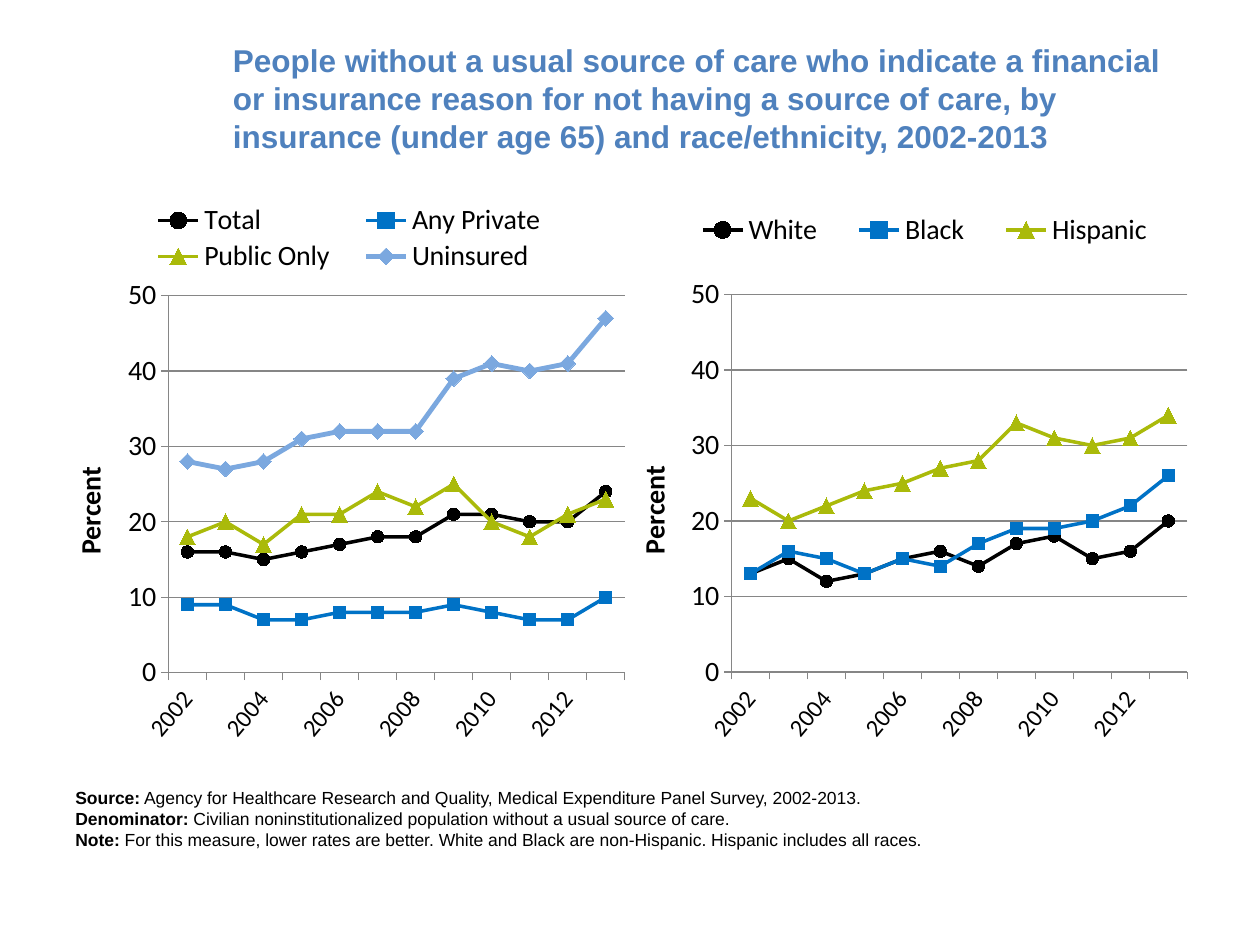
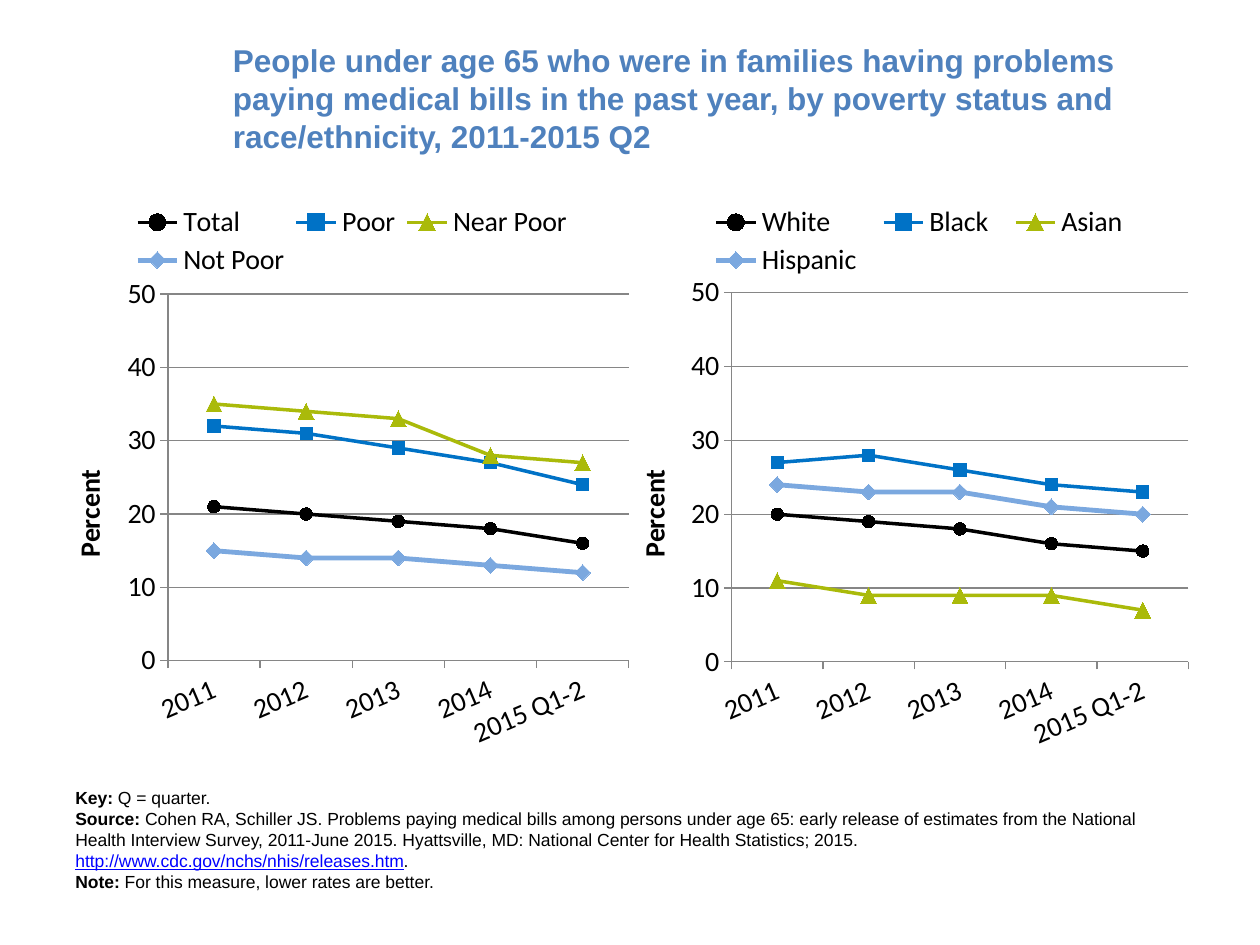
from lxml import etree
from pptx import Presentation
from pptx import util as u
from pptx.chart import data
from pptx.dml import color
from pptx.enum import chart as kinds, text
from pptx.oxml import ns

Pt = u.Pt
BLACK, TITLE_BLUE, LINK_BLUE, GRID_GREY = "000000", "4F81BD", "0000FF", "868686"
CHART_TOP, CHART_SIZE = 115.2, 324
MARK = kinds.XL_MARKER_STYLE
LINE_STYLES = [
    (BLACK, 2, MARK.CIRCLE, 7),
    ("0072C6", 2, MARK.SQUARE, 7),
    ("AABA0A", 2, MARK.TRIANGLE, 9),
    ("7BA8DF", 2.75, MARK.DIAMOND, 9),
]


def rgb(hex_code):
    return color.RGBColor.from_string(hex_code)


def add_layout(parent, position, **modes):
    layout = parent.find(ns.qn("c:layout"))
    if layout is None:
        layout = etree.Element(ns.qn("c:layout"))
        parent.insert(1 if parent.tag == ns.qn("c:legend") else 0, layout)
    manual = etree.SubElement(layout, ns.qn("c:manualLayout"))
    settings = {**modes, "xMode": "edge", "yMode": "edge", **dict(zip("xywh", position))}
    for tag, value in settings.items():
        etree.SubElement(manual, ns.qn(f"c:{tag}")).set("val", str(value))


slides = [
    {
        "title": "People without a usual source of care who indicate a financial or insurance "
                 "reason for not having a source of care, by insurance (under age 65) and "
                 "race/ethnicity, 2002-2013",
        "years": [str(year) for year in range(2002, 2014)],
        "year_size": 14, "year_turn": -50, "year_step": 2,
        "charts": [
            {"left": 36, "plot": (0.186, 0.166, 0.805, 0.665), "legend": (0.12, 0, 0.77, 0.13),
             "series": {
                 "Total": (16, 16, 15, 16, 17, 18, 18, 21, 21, 20, 20, 24),
                 "Any Private": (9, 9, 7, 7, 8, 8, 8, 9, 8, 7, 7, 10),
                 "Public Only": (18, 20, 17, 21, 21, 24, 22, 25, 20, 18, 21, 23),
                 "Uninsured": (28, 27, 28, 31, 32, 32, 32, 39, 41, 40, 41, 47)}},
            {"left": 360, "plot": (0.179, 0.164, 0.804, 0.666), "legend": (0.07, 0.01, 0.9, 0.08),
             "series": {
                 "White": (13, 15, 12, 13, 15, 16, 14, 17, 18, 15, 16, 20),
                 "Black": (13, 16, 15, 13, 15, 14, 17, 19, 19, 20, 22, 26),
                 "Hispanic": (23, 20, 22, 24, 25, 27, 28, 33, 31, 30, 31, 34)}},
        ],
        "notes_width": 648,
        "notes": [
            ("Source:", " Agency for Healthcare Research and Quality, Medical Expenditure "
                        "Panel Survey, 2002-2013."),
            ("Denominator:", " Civilian noninstitutionalized population without a usual "
                             "source of care."),
            ("Note:", " For this measure, lower rates are better. White and Black are "
                      "non-Hispanic. Hispanic includes all races."),
        ],
    },
    {
        "title": "People under age 65 who were in families having problems paying medical bills "
                 "in the past year, by poverty status and race/ethnicity, 2011-2015 Q2",
        "years": ["2011", "2012", "2013", "2014", "2015 Q1-2"],
        "year_size": 16, "year_turn": -23, "year_step": 1,
        "charts": [
            {"left": 36, "plot": (0.185, 0.163, 0.813, 0.647), "legend": (0.11, 0, 0.8, 0.14),
             "series": {
                 "Total": (21, 20, 19, 18, 16),
                 "Poor": (32, 31, 29, 27, 24),
                 "Near Poor": (35, 34, 33, 28, 27),
                 "Not Poor": (15, 14, 14, 13, 12)}},
            {"left": 360, "plot": (0.179, 0.161, 0.806, 0.651), "legend": (0.12, 0, 0.78, 0.14),
             "series": {
                 "White": (20, 19, 18, 16, 15),
                 "Black": (27, 28, 26, 24, 23),
                 "Asian": (11, 9, 9, 9, 7),
                 "Hispanic": (24, 23, 23, 21, 20)}},
        ],
        "notes_width": 648,
        "notes": [
            ("Key:", " Q = quarter."),
            ("Source: ", "Cohen RA, Schiller JS. Problems paying medical bills among persons "
                         "under age 65: early release of estimates from the National Health "
                         "Interview Survey, 2011-June 2015. Hyattsville, MD: National Center "
                         "for Health Statistics; 2015. ",
             "http://www.cdc.gov/nchs/nhis/releases.htm", "."),
            ("Note: ", "For this measure, lower rates are better."),
        ],
    },
]

deck = Presentation()
deck.slide_width, deck.slide_height = Pt(720), Pt(540)

for content in slides:
    slide = deck.slides.add_slide(deck.slide_layouts[6])

    heading = slide.shapes.add_textbox(Pt(126), Pt(21.6), Pt(558), Pt(68.4)).text_frame
    heading.word_wrap = True
    heading.vertical_anchor = text.MSO_ANCHOR.MIDDLE
    heading.text = content["title"]
    heading_font = heading.paragraphs[0].runs[0].font
    for key, value in {"name": "Arial", "size": Pt(18), "bold": True}.items():
        setattr(heading_font, key, value)
    heading_font.color.rgb = rgb(TITLE_BLUE)

    for panel in content["charts"]:
        rates = data.CategoryChartData(number_format="0")
        rates.categories = content["years"]
        for group, percents in panel["series"].items():
            rates.add_series(group, percents)
        chart = slide.shapes.add_chart(
            kinds.XL_CHART_TYPE.LINE_MARKERS, Pt(panel["left"]), Pt(CHART_TOP),
            Pt(CHART_SIZE), Pt(CHART_SIZE), rates).chart
        chart.has_title = False
        chart.has_legend = True
        chart.legend.position = kinds.XL_LEGEND_POSITION.TOP
        chart.legend.include_in_layout = False
        plot = chart.plots[0]
        plot.vary_by_categories = False

        percent_axis, year_axis = chart.value_axis, chart.category_axis
        for key, value in {"minimum_scale": 0, "maximum_scale": 50, "major_unit": 10,
                           "has_major_gridlines": True}.items():
            setattr(percent_axis, key, value)
        percent_axis.tick_labels.number_format = "0"
        percent_axis.tick_labels.number_format_is_linked = False
        axis_name = percent_axis.axis_title.text_frame
        axis_name.text = "Percent"
        name_font = axis_name.paragraphs[0].runs[0].font

        for font, size, bold in [
            (chart.font, 10, False), (chart.legend.font, 16, False), (name_font, 16, True),
            (percent_axis.tick_labels.font, 16, False),
            (year_axis.tick_labels.font, content["year_size"], False),
        ]:
            for key, value in {"name": "Calibri", "size": Pt(size), "bold": bold}.items():
                setattr(font, key, value)
            font.color.rgb = rgb(BLACK)
        chart.font.name = "Arial"

        for axis in (percent_axis, year_axis):
            axis.major_tick_mark = kinds.XL_TICK_MARK.OUTSIDE
            axis.minor_tick_mark = kinds.XL_TICK_MARK.NONE
        for rule in (percent_axis.format.line, year_axis.format.line,
                     percent_axis.major_gridlines.format.line):
            rule.color.rgb = rgb(GRID_GREY)
            rule.width = Pt(0.75)

        year_xml = year_axis._element
        year_xml.find(ns.qn("c:txPr")).find(ns.qn("a:bodyPr")).set(
            "rot", str(content["year_turn"] * 60000))
        label_step = etree.Element(ns.qn("c:tickLblSkip"))
        label_step.set("val", str(content["year_step"]))
        year_xml.find(ns.qn("c:noMultiLvlLbl")).addprevious(label_step)

        for series, (hue, width, marker, size) in zip(plot.series, LINE_STYLES):
            series.smooth = False
            series.format.line.color.rgb = rgb(hue)
            series.format.line.width = Pt(width)
            series.marker.style = marker
            series.marker.size = size
            series.marker.format.fill.solid()
            series.marker.format.fill.fore_color.rgb = rgb(hue)
            series.marker.format.line.color.rgb = rgb(hue)

        plot_area = chart._chartSpace.chart.plotArea
        add_layout(plot_area, panel["plot"], layoutTarget="inner")
        add_layout(chart.legend._element, panel["legend"])

    notes = slide.shapes.add_textbox(
        Pt(36), Pt(446.4), Pt(content["notes_width"]), Pt(44)).text_frame
    notes.word_wrap = True
    for index, pieces in enumerate(content["notes"]):
        line = notes.paragraphs[0] if index == 0 else notes.add_paragraph()
        for position, piece in enumerate(pieces):
            run = line.add_run()
            run.text = piece
            is_link = piece.startswith("http")
            for key, value in {"name": "Arial", "size": Pt(10), "bold": position == 0,
                               "underline": is_link}.items():
                setattr(run.font, key, value)
            run.font.color.rgb = rgb(LINK_BLUE if is_link else BLACK)

deck.save("out.pptx")
